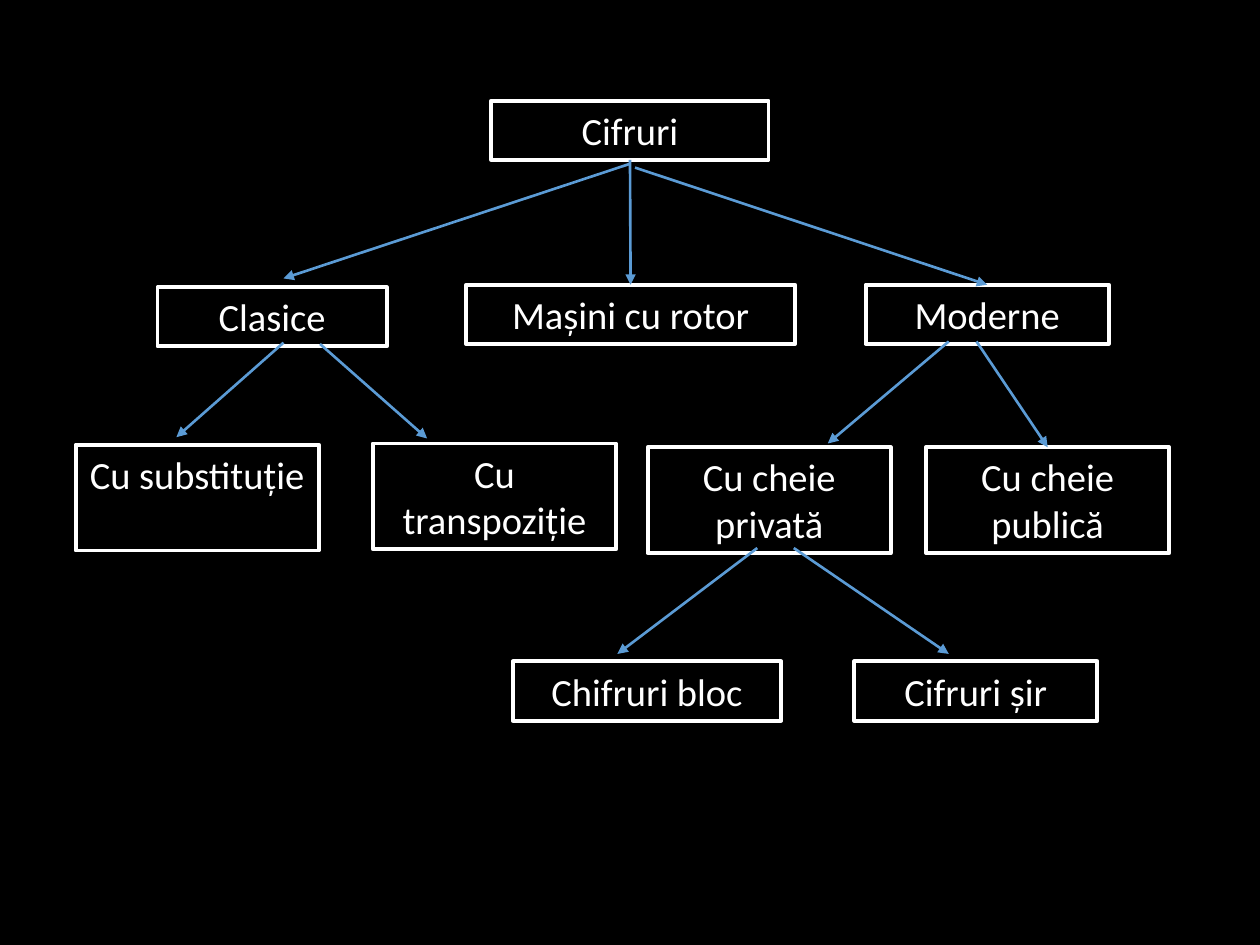
from dataclasses import dataclass

from lxml.etree import SubElement
from pptx import Presentation
from pptx.dml.color import RGBColor
from pptx.enum.shapes import MSO_CONNECTOR as CONN, MSO_SHAPE as SHAPE
from pptx.enum.text import MSO_ANCHOR as ANCHOR, MSO_AUTO_SIZE as AUTO, PP_ALIGN as ALIGN
from pptx.oxml.ns import qn
from pptx.util import Inches, Pt


@dataclass(frozen=True)
class Theme:
    """Colours, font and sizes of the diagram."""
    back: RGBColor = RGBColor(0x00, 0x00, 0x00)
    ink: RGBColor = RGBColor(0xFF, 0xFF, 0xFF)
    arrow: RGBColor = RGBColor(0x5B, 0x9B, 0xD5)
    font: str = "Calibri"
    size: Pt = Pt(22)
    border: Pt = Pt(2.25)
    stroke: Pt = Pt(1.5)


class TreeSlide:
    """Draws boxes and arrows on one slide in one style."""

    def __init__(self, prs, theme):
        """Add a blank slide with the theme background."""
        self.theme = theme
        self.s = prs.slides.add_slide(prs.slide_layouts[6])
        fill = self.s.background.fill
        fill.solid()
        fill.fore_color.rgb = theme.back

    def box(self, text, x, y, w, h):
        """Add an outlined box with centred text."""
        t = self.theme
        sp = self.s.shapes.add_shape(SHAPE.RECTANGLE, *map(Inches, (x, y, w, h)))
        sp.shadow.inherit = False
        sp.fill.background()
        sp.line.color.rgb = t.ink
        sp.line.width = t.border
        tf = sp.text_frame
        tf.word_wrap = True
        tf.auto_size = AUTO.NONE
        tf.vertical_anchor = ANCHOR.TOP
        p = tf.paragraphs[0]
        p.alignment = ALIGN.CENTER
        r = p.add_run()
        r.text = text
        r.font.name = t.font
        r.font.size = t.size
        r.font.color.rgb = t.ink
        return sp

    def arrow(self, start, end, source=None, target=None):
        """Add an arrow, joined to a source bottom or target top if given."""
        c = self.s.shapes.add_connector(CONN.STRAIGHT, *map(Inches, start + end))
        c.line.color.rgb = self.theme.arrow
        c.line.width = self.theme.stroke
        SubElement(c.line._get_or_add_ln(), qn("a:tailEnd"), type="triangle")
        SubElement(c._element.spPr, qn("a:effectLst"))
        if source is not None:
            c.begin_connect(source, 2)
        if target is not None:
            c.end_connect(target, 0)


ONE_LINE, TWO_LINES, WIDTH = 0.47, 0.84, 1.93

BOXES = [
    ("Cifruri", 3.9, 0.8, 2.2, ONE_LINE),
    ("Clasice", 1.25, 2.28, 1.82, ONE_LINE),
    ("Mașini cu rotor", 3.7, 2.26, 2.61, ONE_LINE),
    ("Moderne", 6.87, 2.26, WIDTH, ONE_LINE),
    ("Cu substituție", 0.6, 3.53, WIDTH, TWO_LINES),
    ("Cu transpoziție", 2.96, 3.52, WIDTH, TWO_LINES),
    ("Cu cheie privată", 5.14, 3.55, WIDTH, TWO_LINES),
    ("Cu cheie publică", 7.35, 3.55, WIDTH, TWO_LINES),
    ("Chifruri bloc", 4.07, 5.25, 2.13, ONE_LINE),
    ("Cifruri șir", 6.78, 5.25, WIDTH, ONE_LINE),
]

ARROWS = [
    ((5, 1.3), (2.25, 2.21), None, None),
    ((5, 1.27), (5, 2.26), "Cifruri", "Mașini cu rotor"),
    ((5.04, 1.33), (7.84, 2.26), None, "Moderne"),
    ((2.25, 2.72), (1.4, 3.47), None, None),
    ((2.54, 2.73), (3.39, 3.48), None, None),
    ((7.53, 2.71), (6.57, 3.52), None, None),
    ((7.75, 2.71), (8.31, 3.55), None, "Cu cheie publică"),
    ((6.01, 4.35), (4.9, 5.19), None, None),
    ((6.3, 4.35), (7.53, 5.19), None, None),
]


def main():
    """Build the cipher tree and save it."""
    prs = Presentation()
    prs.slide_width, prs.slide_height = Inches(10), Inches(7.5)
    tree = TreeSlide(prs, Theme())
    boxes = {text: tree.box(text, *place) for text, *place in BOXES}
    for start, end, source, target in ARROWS:
        tree.arrow(start, end, boxes.get(source), boxes.get(target))
    prs.save("out.pptx")


if __name__ == "__main__":
    main()
